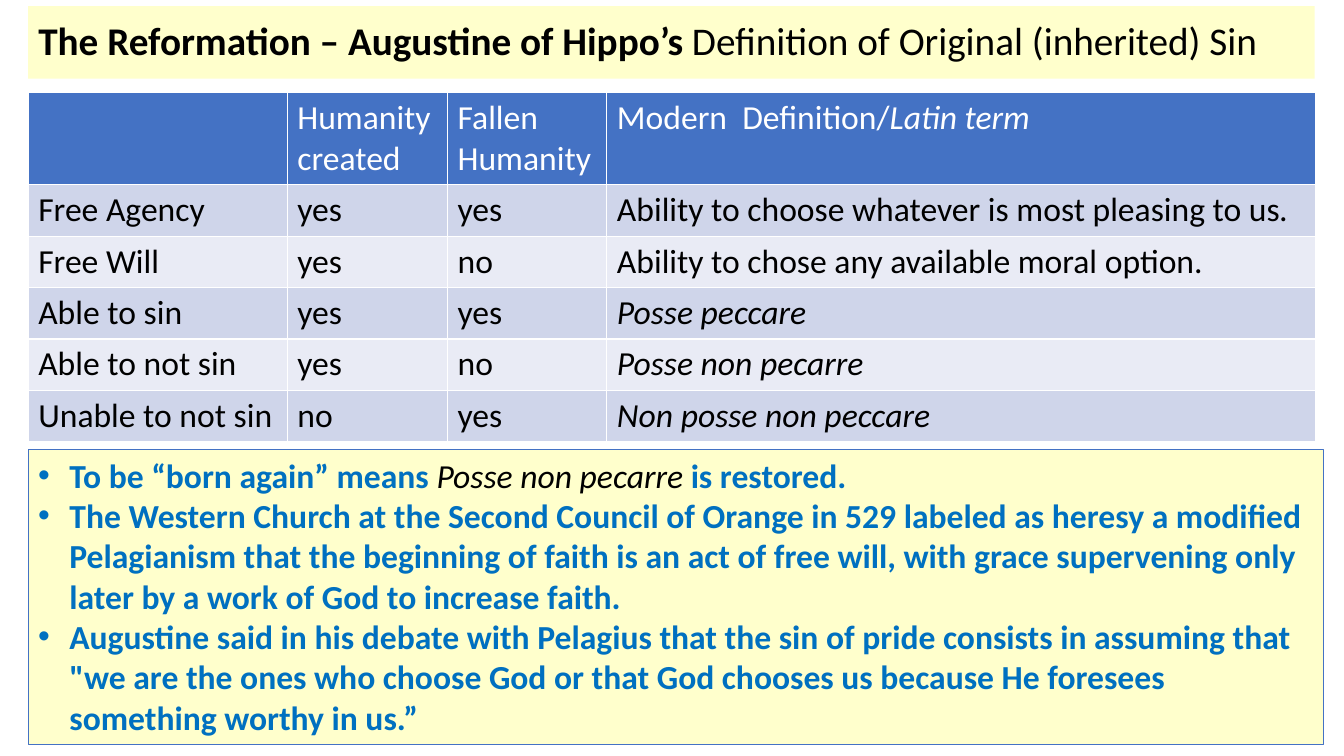
"""Build the slide on Augustine's definition of original sin."""
from lxml.etree import SubElement
from pptx import Presentation
from pptx.dml.color import RGBColor
from pptx.enum.text import MSO_ANCHOR, MSO_AUTO_SIZE, PP_ALIGN
from pptx.oxml.ns import qn
from pptx.util import Inches, Pt

CREAM, BLUE, ACCENT = "FFFFCC", "0070C0", "4472C4"
BLACK, WHITE = "000000", "FFFFFF"
BANDS = ["E9EBF5", "CFD5EA"]
LEFT, WIDTH = Inches(0.28), Inches(12.76)


def color(value):
    return RGBColor.from_string(value)


def write(para, pieces, size, shade, bold=False):
    """Add (text, style) pieces; a style may hold color, bold and italic."""
    for text, style in pieces:
        span = para.add_run()
        span.text = text
        span.font.name = "Calibri"
        span.font.size = Pt(size)
        span.font.bold = style.get("bold", bold)
        span.font.italic = style.get("italic", False)
        span.font.color.rgb = color(style.get("color", shade))


deck = Presentation()
deck.slide_width, deck.slide_height = Inches(13.33), Inches(7.5)
page = deck.slides.add_slide(deck.slide_layouts[5])

title = page.shapes.title
title.left, title.top, title.width, title.height = LEFT, Inches(0.06), WIDTH, Inches(0.72)
title.fill.solid()
title.fill.fore_color.rgb = color(CREAM)
title.text_frame.auto_size = MSO_AUTO_SIZE.NONE
title.text_frame.vertical_anchor = MSO_ANCHOR.MIDDLE
heading = title.text_frame.paragraphs[0]
heading.alignment = PP_ALIGN.LEFT
heading.line_spacing = 0.9
write(heading, [("The Reformation – Augustine of Hippo’s ", {"bold": True}),
                ("Definition of Original (inherited) Sin", {})], 28, BLACK)

ITALIC = {"italic": True}
rows = [
    ["", "Humanity created", "Fallen Humanity",
     [("Modern  Definition/", {}), ("Latin term", ITALIC)]],
    ["Free Agency", "yes", "yes",
     [("Ability to choose whatever is most pleasing to us", {}), (".", ITALIC)]],
    ["Free Will", "yes", "no", "Ability to chose any available moral option."],
    ["Able to sin", "yes", "yes", [("Posse peccare", ITALIC)]],
    ["Able to not sin", "yes", "no", [("Posse non pecarre", ITALIC)]],
    ["Unable to not sin", "no", "yes", [("Non posse non peccare", ITALIC)]],
]
column_widths = [2.57, 1.59, 1.58, 7.03]
table = page.shapes.add_table(len(rows), len(column_widths), LEFT, Inches(0.92),
                              WIDTH, Inches(3.46)).table
for column, width in zip(table.columns, column_widths):
    column.width = Inches(width)
for r, row in enumerate(rows):
    table.rows[r].height = Inches(0.51 if r else 0.91)
    for c, content in enumerate(row):
        cell = table.cell(r, c)
        cell.fill.solid()
        cell.fill.fore_color.rgb = color(BANDS[r % 2] if r else ACCENT)
        pieces = [(content, {})] if isinstance(content, str) else content
        write(cell.text_frame.paragraphs[0], pieces, 24, BLACK if r else WHITE)

notes = [
    [("To be “born again” means ", {}),
     ("Posse non pecarre ", {"color": BLACK, "bold": False, "italic": True}),
     ("is restored.", {})],
    [("The Western Church at the Second Council of Orange in 529 labeled as heresy "
      "a modified Pelagianism that the beginning of faith is an act of free will, "
      "with grace supervening only later by a work of God to increase faith.", {})],
    [("Augustine said in his debate with Pelagius that the sin of pride consists "
      "in assuming that \"we are the ones who choose God or that God chooses us "
      "because He foresees something worthy in us.”", {})],
]
box = page.shapes.add_textbox(LEFT, Inches(4.46), Inches(12.85), Inches(2.93))
box.fill.solid()
box.fill.fore_color.rgb = color(CREAM)
box.line.color.rgb = color(ACCENT)
box.line.width = Pt(0.75)
frame = box.text_frame
frame.word_wrap = True
frame.auto_size = MSO_AUTO_SIZE.SHAPE_TO_FIT_TEXT
indent = Inches(0.31)
for n, pieces in enumerate(notes):
    para = frame.add_paragraph() if n else frame.paragraphs[0]
    properties = para._p.get_or_add_pPr()
    properties.set("marL", str(indent))
    properties.set("indent", str(-indent))
    SubElement(properties, qn("a:buFont"), typeface="Arial")
    SubElement(properties, qn("a:buChar"), char="•")
    write(para, pieces, 24, BLUE, bold=True)

deck.save("out.pptx")
